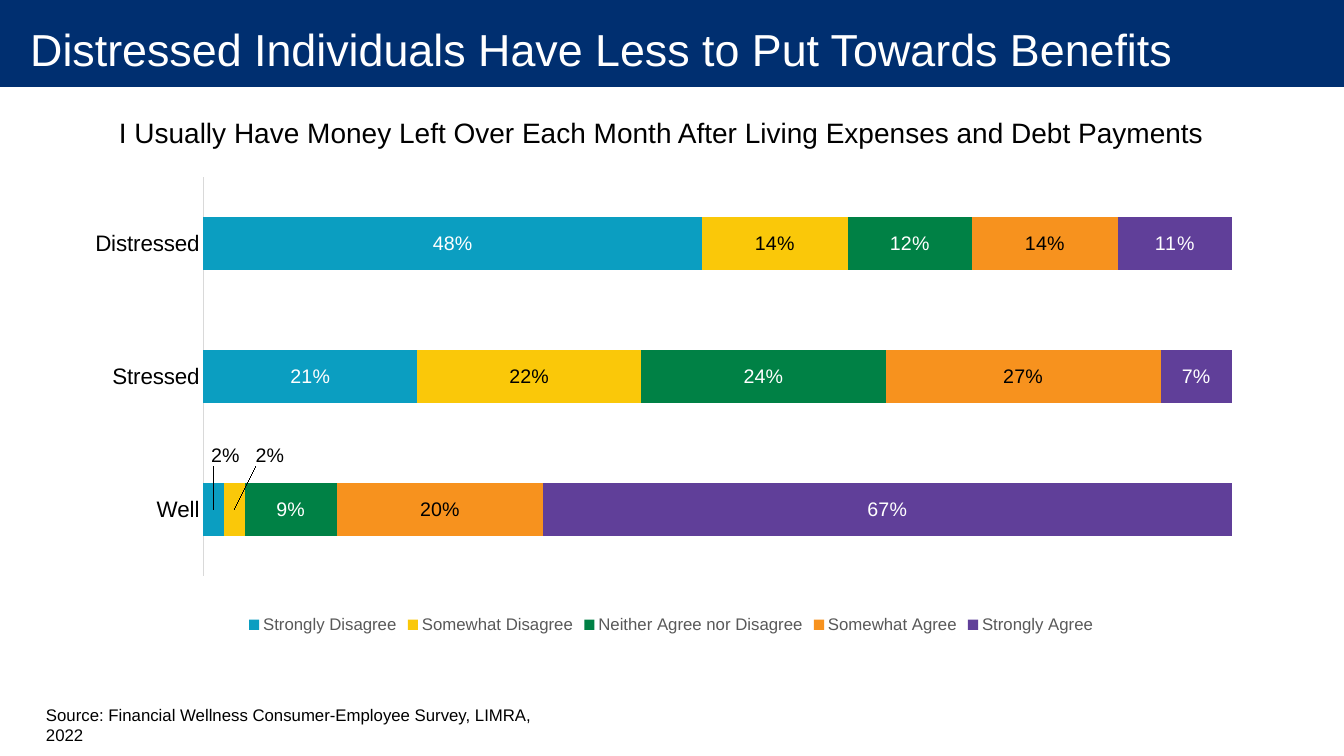
import pptx
import pptx.chart.data
import pptx.dml.color
import pptx.enum.chart
import pptx.enum.shapes
import pptx.enum.text
import pptx.oxml
import pptx.oxml.ns
import pptx.util
from pptx.util import Cm, Pt

TITLE = "Distressed Individuals Have Less to Put Towards Benefits"
QUESTION = "I Usually Have Money Left Over Each Month After Living Expenses and Debt Payments"
SOURCE = "Source: Financial Wellness Consumer-Employee Survey, LIMRA, 2022"
GROUPS = ["Distressed", "Stressed", "Well"]
# answer, share per group, bar colour, label colour
ANSWERS = [
    ("Strongly Disagree", (0.48, 0.21, 0.02), "0B9EC1", "FFFFFF"),
    ("Somewhat Disagree", (0.14, 0.22, 0.02), "FAC809", "000000"),
    ("Neither Agree nor Disagree", (0.12, 0.24, 0.09), "008145", "FFFFFF"),
    ("Somewhat Agree", (0.14, 0.27, 0.2), "F7921E", "000000"),
    ("Strongly Agree", (0.11, 0.07, 0.67), "603F99", "FFFFFF"),
]
# answer: (x, y) shift of its "Well" label, as a share of the chart
RAISED_LABELS = {"Strongly Disagree": (0.01, -0.11), "Somewhat Disagree": (0.03, -0.11)}
PLOT_AREA = {"x": 0.108, "y": 0.055, "w": 0.862, "h": 0.818}
SLIDE_WIDTH, SLIDE_HEIGHT = Cm(33.87), Cm(19.05)


def color(value):
    return pptx.dml.color.RGBColor.from_string(value)


def format_font(font, size, font_color):
    for name, value in {"name": "Arial", "size": Pt(size), "bold": False}.items():
        setattr(font, name, value)
    font.color.rgb = color(font_color)


def manual_layout(values, target=None):
    """Return a c:layout element with the given x, y, w, h shares."""
    parts = f'<c:layoutTarget val="{target}"/>' if target else ""
    if target:
        parts += '<c:xMode val="edge"/><c:yMode val="edge"/>'
    parts += "".join(f'<c:{name} val="{value}"/>' for name, value in values.items())
    return pptx.oxml.parse_xml(
        f'<c:layout {pptx.oxml.ns.nsdecls("c")}>'
        f"<c:manualLayout>{parts}</c:manualLayout></c:layout>"
    )


def write_text(shape, text, size, font_color, **frame_format):
    frame = shape.text_frame
    for name, value in frame_format.items():
        setattr(frame, name, value)
    paragraph = frame.paragraphs[0]
    paragraph.text = text
    format_font(paragraph.runs[0].font, size, font_color)
    return paragraph


def add_header(slide):
    band = slide.shapes.add_shape(
        pptx.enum.shapes.MSO_SHAPE.RECTANGLE, 0, 0, SLIDE_WIDTH, Cm(2.19))
    band.shadow.inherit = False
    band.fill.solid()
    band.fill.fore_color.rgb = color("002F70")
    band.line.fill.background()
    slide.shapes._spTree.insert(2, band._element)  # behind the title

    title = slide.shapes.title
    title.left, title.top, title.width, title.height = 0, 0, SLIDE_WIDTH, Cm(2.46)
    paragraph = write_text(
        title, TITLE, 32, "FFFFFF", word_wrap=True,
        auto_size=pptx.enum.text.MSO_AUTO_SIZE.NONE,
        vertical_anchor=pptx.enum.text.MSO_ANCHOR.MIDDLE,
        margin_left=Cm(0.76), margin_right=Cm(0.51), margin_top=0, margin_bottom=0)
    paragraph.alignment = pptx.enum.text.PP_ALIGN.LEFT


def format_series(series, bar_color, label_color):
    series.format.fill.solid()
    series.format.fill.fore_color.rgb = color(bar_color)
    center = pptx.enum.chart.XL_LABEL_POSITION.CENTER
    labels = series.data_labels
    for name, value in {"show_value": True, "number_format": "0%",
                        "number_format_is_linked": False, "position": center}.items():
        setattr(labels, name, value)
    format_font(labels.font, 14, label_color)
    if series.name in RAISED_LABELS:
        label = series.points[GROUPS.index("Well")].data_label
        format_font(label.font, 14, "000000")
        label.position = center
        index = series._element.xpath("c:dLbls/c:dLbl/c:idx")[0]
        index.addnext(manual_layout(dict(zip("xy", RAISED_LABELS[series.name]))))


def add_answer_chart(slide):
    data = pptx.chart.data.CategoryChartData(number_format="0%")
    data.categories = GROUPS
    for name, shares, _, _ in ANSWERS:
        data.add_series(name, shares)
    chart = slide.shapes.add_chart(
        pptx.enum.chart.XL_CHART_TYPE.BAR_STACKED_100,
        Cm(1.88), Cm(3.78), Cm(30.07), Cm(12.29), data).chart
    format_font(chart.font, 10, "000000")
    chart.has_title = False

    chart.has_legend = True
    chart.legend.position = pptx.enum.chart.XL_LEGEND_POSITION.BOTTOM
    chart.legend.include_in_layout = False
    format_font(chart.legend.font, 12, "595959")

    category_axis = chart.category_axis
    category_axis.reverse_order = True
    category_axis.major_tick_mark = pptx.enum.chart.XL_TICK_MARK.NONE
    category_axis.format.line.color.rgb = color("D9D9D9")
    category_axis.format.line.width = Pt(0.75)
    format_font(category_axis.tick_labels.font, 16, "000000")
    chart.value_axis.has_major_gridlines = False
    chart.value_axis.visible = False

    plot = chart.plots[0]
    plot.gap_width, plot.overlap, plot.vary_by_categories = 150, 100, False
    for series, (_, _, bar_color, label_color) in zip(plot.series, ANSWERS):
        format_series(series, bar_color, label_color)

    plot_area = chart._chartSpace.xpath("c:chart/c:plotArea")[0]
    for layout in plot_area.xpath("c:layout"):
        plot_area.remove(layout)
    plot_area.insert(0, manual_layout(PLOT_AREA, "inner"))


def main():
    presentation = pptx.Presentation()
    presentation.slide_width, presentation.slide_height = SLIDE_WIDTH, SLIDE_HEIGHT
    slide = presentation.slides.add_slide(presentation.slide_layouts[5])
    add_header(slide)

    source = slide.shapes.add_textbox(Cm(0.91), Cm(17.63), Cm(13.79), Cm(0.76))
    write_text(source, SOURCE, 12, "000000", word_wrap=True)

    add_answer_chart(slide)

    question = slide.shapes.add_textbox(Cm(0.91), Cm(2.79), Cm(31.52), Cm(1.96))
    paragraph = write_text(question, QUESTION, 20, "000000", word_wrap=True)
    paragraph.alignment = pptx.enum.text.PP_ALIGN.CENTER

    presentation.save("out.pptx")


if __name__ == "__main__":
    main()
